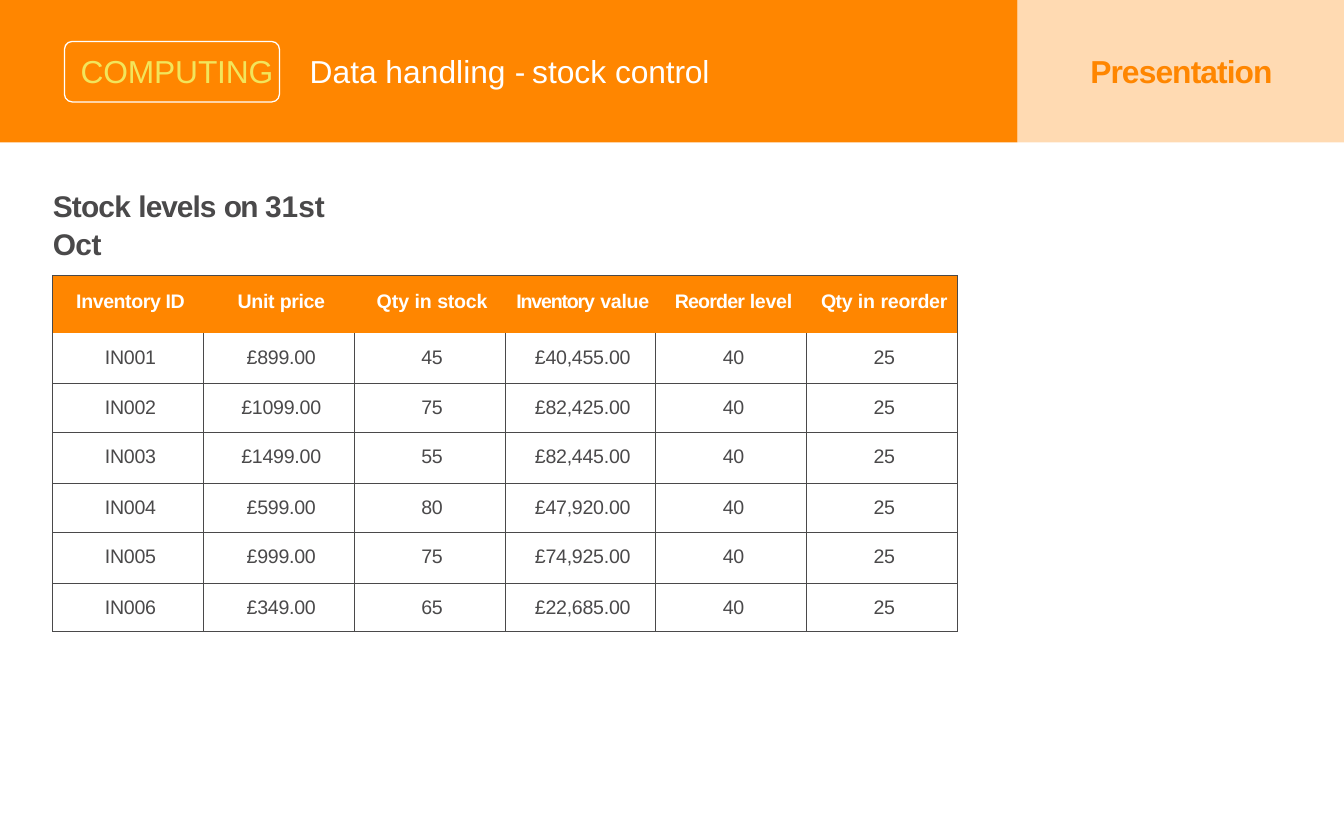
import pptx
import pptx.util
import pptx.dml.color
import pptx.enum.shapes
import pptx.enum.text
import pptx.oxml.ns
from lxml import etree

Pt = pptx.util.Pt
ANCHOR = pptx.enum.text.MSO_ANCHOR
ALIGN = pptx.enum.text.PP_ALIGN
SHAPES = pptx.enum.shapes.MSO_SHAPE
qn = pptx.oxml.ns.qn

C = {"orange": "FF8600", "white": "FFFFFF", "yellow": "F2E55B", "grey": "4A494A"}
BAND_H, SPLIT, WIDTH, HEIGHT = 76.32, 545.04, 720, 449.28

BANDS = [(SPLIT, WIDTH - SPLIT, 30), (0, SPLIT, 100)]
FRAME = (34.56, 22.2, 115.2, 32.4)

TITLE = {"at": (35.28, 26.64, 114.48, 22.32), "indent": 7.9, "inset": 0.9, "spacing": 1,
         "font": {"size": 17, "color": "yellow"}, "runs": [("COMPUTING", -0.1)]}
TEXTS = [
    {"at": (583.2, 26.64, 100.08, 22.32), "indent": 0.9, "inset": 0.9, "spacing": 1,
     "font": {"size": 17, "color": "orange", "bold": True}, "runs": [("Presentation", -0.5)]},
    {"at": (165, 26.64, 221.04, 22.32), "indent": 0.9, "inset": 0.9, "spacing": 1,
     "font": {"size": 17, "color": "white"},
     "runs": [("Data handling ", 0), ("- ", -1.1), ("stock ", 0), ("control", -0.1)]},
    {"at": (27.36, 87.84, 176.4, 51.84), "indent": 0.9, "inset": 11.7, "spacing": 1.05,
     "font": {"size": 16, "color": "grey", "bold": True},
     "runs": [("Stock ", -0.4), ("levels ", -0.5), ("on ", -0.9), ("31st ", 0), ("Oct", -0.2)]},
]

HEADERS = [
    [("Inventory ID", -0.2)],
    [("Unit ", -0.1), ("price", -0.2)],
    [("Qty in ", 0), ("stock", -0.1)],
    [("Inventory", -0.6), (" value", -0.1)],
    [("Reorder ", -0.4), ("level", -0.1)],
    [("Qty ", -0.2), ("in ", 0), ("reorder", -0.1)],
]
STOCK = [
    ("IN001", "£899.00", "45", "£40,455.00", "40", "25"),
    ("IN002", "£1099.00", "75", "£82,425.00", "40", "25"),
    ("IN003", "£1499.00", "55", "£82,445.00", "40", "25"),
    ("IN004", "£599.00", "80", "£47,920.00", "40", "25"),
    ("IN005", "£999.00", "75", "£74,925.00", "40", "25"),
    ("IN006", "£349.00", "65", "£22,685.00", "40", "25"),
]
TRACKING = (-0.1, -0.1, -0.2, -0.1, -0.2, -0.2)
ROW_H = (30.8, 27, 26.3, 27.3, 26.3, 27.3, 25.8)
TABLE_X, TABLE_Y, COL_W = 28.1, 147.6, 80.76
HEAD_FONT = {"size": 10.5, "color": "white", "bold": True}
BODY_FONT = {"size": 10.5, "color": "grey", "bold": False}


def rgb(name):
    """Return the named colour."""
    return pptx.dml.color.RGBColor.from_string(C[name])


def write(tf, runs, font, indent, align=ALIGN.LEFT, spacing=1):
    """Fill the first paragraph with tracked runs."""
    p = tf.paragraphs[0]
    p.alignment, p.line_spacing = align, spacing
    p._p.get_or_add_pPr().set("marL", str(Pt(indent)))
    for text, tracking in runs:
        r = p.add_run()
        r.text = text
        values = {"name": "Arial", "size": Pt(font["size"]), "bold": font.get("bold", False)}
        for key, value in values.items():
            setattr(r.font, key, value)
        r.font.color.rgb = rgb(font["color"])
        r._r.get_or_add_rPr().set("spc", str(round(tracking * 100)))


def write_box(sp, item):
    """Place a text shape and write its text."""
    sp.left, sp.top, sp.width, sp.height = map(Pt, item["at"])
    tf = sp.text_frame
    values = {"word_wrap": True, "auto_size": pptx.enum.text.MSO_AUTO_SIZE.SHAPE_TO_FIT_TEXT,
              "vertical_anchor": ANCHOR.TOP, "margin_left": 0, "margin_right": 0,
              "margin_top": Pt(item["inset"]), "margin_bottom": 0}
    for key, value in values.items():
        setattr(tf, key, value)
    write(tf, item["runs"], item["font"], item["indent"], spacing=item["spacing"])


def set_borders(cell, widths):
    """Draw the cell's left, right, top and bottom lines."""
    for side, width in zip("LRTB", widths):
        ln = etree.SubElement(cell._tc.get_or_add_tcPr(), qn("a:ln" + side), w=str(Pt(width)))
        if width:
            fill = etree.SubElement(ln, qn("a:solidFill"))
            etree.SubElement(fill, qn("a:srgbClr"), val=C["grey"])
        else:
            etree.SubElement(ln, qn("a:noFill"))


def add_stock_table(s):
    """Add the stock table."""
    rows = [HEADERS] + [[[cell] for cell in zip(row, TRACKING)] for row in STOCK]
    n_rows, n_cols = len(rows), len(HEADERS)
    table = s.shapes.add_table(n_rows, n_cols, Pt(TABLE_X), Pt(TABLE_Y),
                               Pt(COL_W * n_cols), Pt(sum(ROW_H))).table
    table.first_row = table.horz_banding = False
    for col in table.columns:
        col.width = Pt(COL_W)
    for i, row in enumerate(rows):
        table.rows[i].height = Pt(ROW_H[i])
        head, inner = i == 0, 0 if i == 0 else 0.25
        for j, runs in enumerate(row):
            cell = table.cell(i, j)
            values = {"margin_left": 0, "margin_right": 0, "margin_bottom": 0,
                      "margin_top": Pt(8.4 if head else 7.2), "vertical_anchor": ANCHOR.TOP}
            for key, value in values.items():
                setattr(cell, key, value)
            set_borders(cell, (0.5 if j == 0 else inner, 0.5 if j == n_cols - 1 else inner,
                               0.5 if head else 0 if i == 1 else 0.25,
                               0.75 if i == n_rows - 1 else inner))
            if head:
                cell.fill.solid()
                cell.fill.fore_color.rgb = rgb("orange")
            else:
                cell.fill.background()
            write(cell.text_frame, runs, HEAD_FONT if head else BODY_FONT, 2.9, ALIGN.CENTER)


def main():
    """Build the stock control slide."""
    prs = pptx.Presentation()
    prs.slide_width, prs.slide_height = Pt(WIDTH), Pt(HEIGHT)
    s = prs.slides.add_slide(prs.slide_layouts[5])
    for x, width, opacity in BANDS:
        sp = s.shapes.add_shape(SHAPES.RECTANGLE, Pt(x), 0, Pt(width), Pt(BAND_H))
        sp.shadow.inherit = False
        sp.fill.solid()
        sp.fill.fore_color.rgb = rgb("orange")
        sp.line.fill.background()
        if opacity < 100:
            color = sp._element.spPr.find(".//" + qn("a:srgbClr"))
            etree.SubElement(color, qn("a:alpha"), val=str(opacity * 1000))
    title = s.shapes.title
    s.shapes._spTree.append(title._element)
    write_box(title, TITLE)
    frame = s.shapes.add_shape(SHAPES.ROUNDED_RECTANGLE, *map(Pt, FRAME))
    frame.adjustments[0] = 0.13
    frame.shadow.inherit = False
    frame.fill.background()
    frame.line.color.rgb = rgb("white")
    frame.line.width = Pt(0.68)
    for item in TEXTS:
        write_box(s.shapes.add_textbox(0, 0, 0, 0), item)
    add_stock_table(s)
    prs.save("out.pptx")


if __name__ == "__main__":
    main()
